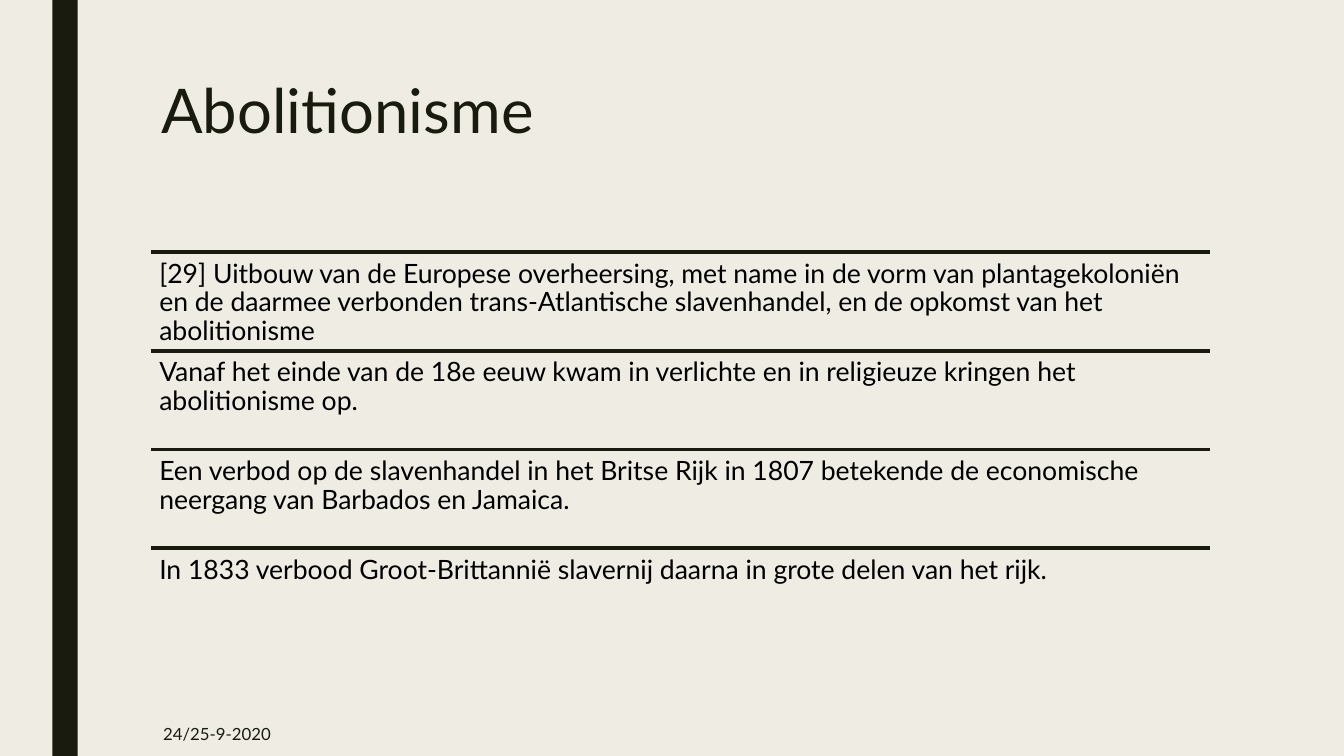
from lxml import etree
from pptx import Presentation
from pptx.dml.color import RGBColor
from pptx.enum import shapes, text
from pptx.oxml import ns
from pptx.util import Inches, Pt

DARK = RGBColor(0x19, 0x1B, 0x0E)
CREAM = RGBColor(0xEF, 0xED, 0xE3)
BLACK = RGBColor(0, 0, 0)
FONT = "Lato"
LEFT, WIDTH = 1.5, 10.5
ROW_TOP, ROW_HEIGHT = 2.5, 0.98
STATEMENTS = [
    "[29] Uitbouw van de Europese overheersing, met name in de vorm van "
    "plantagekoloniën en de daarmee verbonden trans-Atlantische slavenhandel, "
    "en de opkomst van het abolitionisme",
    "Vanaf het einde van de 18e eeuw kwam in verlichte en in religieuze "
    "kringen het abolitionisme op.",
    "Een verbod op de slavenhandel in het Britse Rijk in 1807 betekende de "
    "economische neergang van Barbados en Jamaica.",
    "In 1833 verbood Groot-Brittannië slavernij daarna in grote delen van "
    "het rijk.",
]


def apply(target, values):
    for name, value in values.items():
        setattr(target, name, value)


def write(box, words, size, color, frame_format, para_format):
    frame = box.text_frame
    apply(frame, {"word_wrap": True, "auto_size": text.MSO_AUTO_SIZE.NONE,
                  **frame_format})
    para = frame.paragraphs[0]
    apply(para, {"alignment": text.PP_ALIGN.LEFT, **para_format})
    span = para.add_run()
    span.text = words
    apply(span.font, {"name": FONT, "size": Pt(size)})
    span.font.color.rgb = color


def add_title(slide, words):
    title = slide.shapes.title
    apply(title, {"left": Inches(LEFT), "top": Inches(0.75),
                  "width": Inches(WIDTH), "height": Inches(1.62)})
    write(title, words, 44, DARK,
          {"vertical_anchor": text.MSO_ANCHOR.TOP}, {"line_spacing": 0.89})


def add_side_bar(slide):
    bar = slide.shapes.add_shape(shapes.MSO_SHAPE.RECTANGLE, Inches(0.52),
                                 Inches(0), Inches(0.25), Inches(7.5))
    bar.shadow.inherit = False
    bar.fill.solid()
    bar.fill.fore_color.rgb = DARK
    bar.line.fill.background()


def add_rule(slide, top):
    rule = slide.shapes.add_connector(
        shapes.MSO_CONNECTOR.STRAIGHT, Inches(LEFT), Inches(top),
        Inches(LEFT + WIDTH), Inches(top))
    rule.line.width = Pt(2.75)
    rule.line.color.rgb = DARK
    etree.SubElement(rule._element.spPr, ns.qn("a:effectLst"))


def add_statement(slide, top, words):
    add_rule(slide, top)
    box = slide.shapes.add_textbox(Inches(LEFT), Inches(top),
                                   Inches(WIDTH), Inches(ROW_HEIGHT))
    margins = {f"margin_{side}": Inches(0.08)
               for side in ("left", "top", "right", "bottom")}
    write(box, words, 19, BLACK, margins, {"line_spacing": 0.9})


def add_date(slide, words):
    box = slide.shapes.add_textbox(Inches(1.52), Inches(7.06),
                                   Inches(1.32), Inches(0.44))
    write(box, words, 12, DARK,
          {"vertical_anchor": text.MSO_ANCHOR.MIDDLE}, {"space_after": Pt(6)})


def main():
    deck = Presentation()
    apply(deck, {"slide_width": Inches(13.33), "slide_height": Inches(7.5)})
    slide = deck.slides.add_slide(deck.slide_layouts.get_by_name("Title Only"))
    slide.background.fill.solid()
    slide.background.fill.fore_color.rgb = CREAM
    add_side_bar(slide)
    add_title(slide, "Abolitionisme")
    for row, words in enumerate(STATEMENTS):
        add_statement(slide, ROW_TOP + row * ROW_HEIGHT, words)
    add_date(slide, "24/25-9-2020")
    deck.save("out.pptx")


if __name__ == "__main__":
    main()
